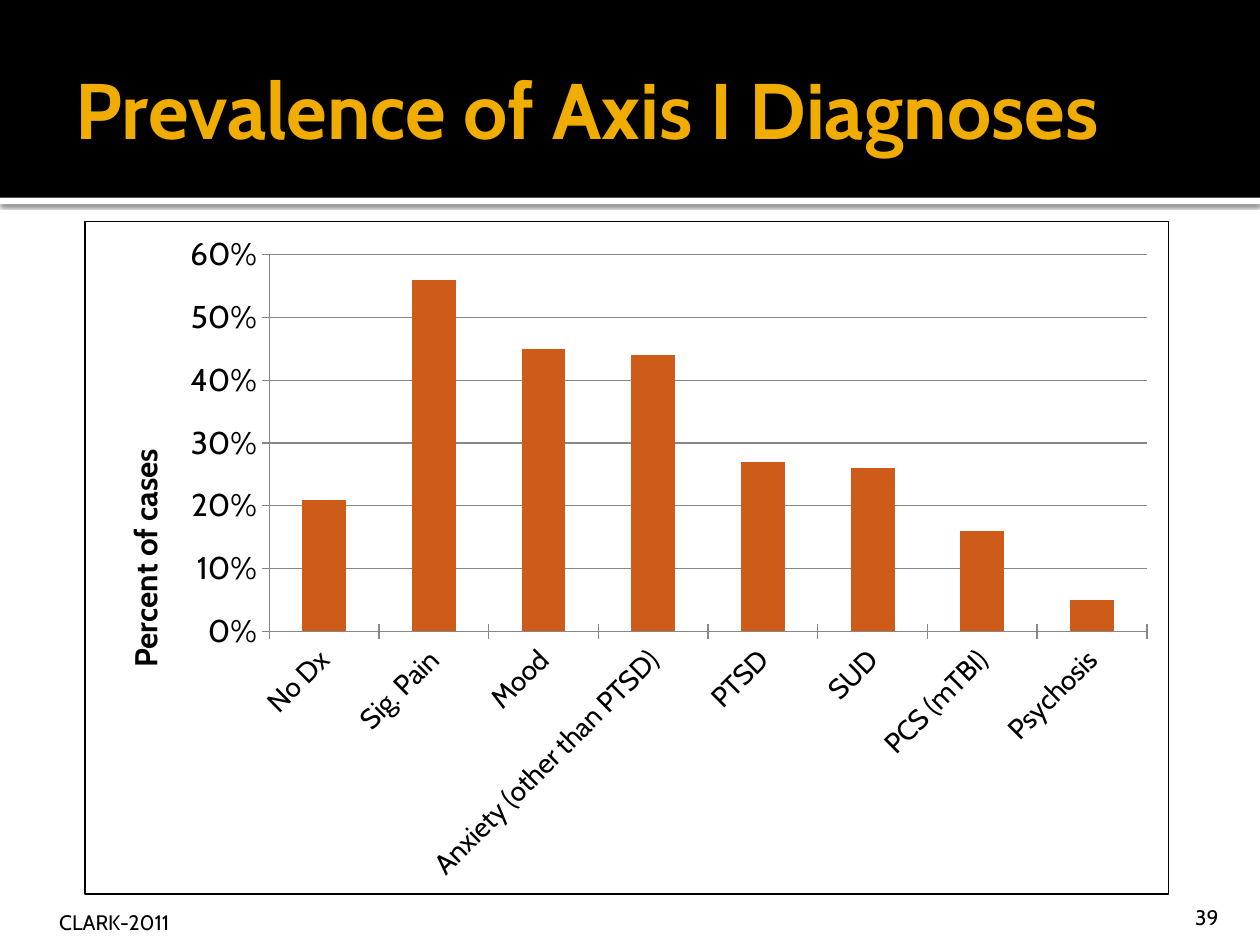
from dataclasses import dataclass

from lxml.etree import SubElement
from pptx import Presentation
from pptx.chart.data import CategoryChartData
from pptx.dml.color import RGBColor
from pptx.enum.chart import XL_CHART_TYPE, XL_TICK_MARK
from pptx.enum.shapes import MSO_SHAPE
from pptx.enum.text import MSO_ANCHOR, PP_ALIGN
from pptx.oxml import parse_xml
from pptx.oxml.ns import nsdecls, qn
from pptx.util import Inches, Pt


@dataclass(frozen=True)
class Theme:
    font: str = "Cabin"
    gold: str = "F0AD00"
    black: str = "000000"
    white: str = "FFFFFF"
    bar: str = "CF5B1B"
    grid: str = "878787"
    head: int = 45
    body: int = 18
    label: int = 16
    small: int = 12


THEME = Theme()

CASES = {
    "No Dx": 0.21,
    "Sig. Pain": 0.56,
    "Mood": 0.45,
    "Anxiety (other than PTSD)": 0.44,
    "PTSD": 0.27,
    "SUD": 0.26,
    "PCS (mTBI)": 0.16,
    "Psychosis": 0.05,
}


def rgb(code):
    return RGBColor.from_string(code)


def style(font, size, color=THEME.black, bold=False):
    font.name = THEME.font
    font.size = Pt(size)
    font.bold = bold
    font.color.rgb = rgb(color)


def write(frame, text, size=THEME.small, color=THEME.black, bold=False,
          align=PP_ALIGN.LEFT, anchor=MSO_ANCHOR.BOTTOM,
          inset=(0.05, 0.05, 0.05, 0)):
    frame.word_wrap = True
    frame.vertical_anchor = anchor
    (frame.margin_left, frame.margin_top,
     frame.margin_right, frame.margin_bottom) = map(Inches, inset)
    para = frame.paragraphs[0]
    para.alignment = align
    run = para.add_run()
    run.text = text
    style(run.font, size, color, bold)


def add_band(slide, top, height, color):
    band = slide.shapes.add_shape(
        MSO_SHAPE.RECTANGLE, 0, Inches(top), Inches(10), Inches(height))
    band.shadow.inherit = False
    band.fill.solid()
    band.fill.fore_color.rgb = rgb(color)
    band.line.fill.background()
    return band


def add_shadow(shape):
    effects = shape._element.spPr.find(qn("a:effectLst"))
    effects.append(parse_xml(
        f'<a:outerShdw {nsdecls("a")} blurRad="{Pt(2.5)}" dist="{Pt(0.8)}" '
        'dir="5400000" algn="t" rotWithShape="0">'
        f'<a:srgbClr val="{THEME.black}"><a:alpha val="60000"/></a:srgbClr>'
        '</a:outerShdw>'))


def add_title(slide, text):
    title = slide.shapes.title
    title.left, title.top = Inches(0.5), Inches(0.17)
    title.width, title.height = Inches(9), Inches(1.37)
    write(title.text_frame, text, size=THEME.head, color=THEME.gold, bold=True,
          anchor=MSO_ANCHOR.MIDDLE, inset=(0.1, 0.05, 0.05, 0.05))
    slide.shapes._spTree.append(title._element)


def add_note(slide, text, box, **form):
    note = slide.shapes.add_textbox(*map(Inches, box))
    write(note.text_frame, text, **form)


def place(node, index, **parts):
    layout = node.find(qn("c:layout"))
    if layout is None:
        layout = parse_xml(f'<c:layout {nsdecls("c")}/>')
        node.insert(index, layout)
    manual = SubElement(layout, qn("c:manualLayout"))
    for tag, value in parts.items():
        SubElement(manual, qn(f"c:{tag}")).set("val", str(value))


def turn(node, degrees):
    body = next(node.iter(qn("a:bodyPr")))
    body.set("rot", str(degrees * 60000))
    body.set("vert", "horz")


def add_border(chart):
    space = chart._chartSpace
    space.find(qn("c:txPr")).addprevious(parse_xml(
        f'<c:spPr {nsdecls("c", "a")}><a:noFill/><a:ln w="{Pt(0.75)}">'
        f'<a:solidFill><a:srgbClr val="{THEME.black}"/></a:solidFill>'
        '</a:ln></c:spPr>'))


def format_axis(axis, size):
    axis.major_tick_mark = XL_TICK_MARK.CROSS
    axis.minor_tick_mark = XL_TICK_MARK.NONE
    style(axis.tick_labels.font, size)
    axis.format.line.color.rgb = rgb(THEME.grid)
    axis.format.line.width = Pt(0.75)


def add_bars(slide, cases, box):
    data = CategoryChartData(number_format="0%")
    data.categories = list(cases)
    data.add_series("Series 1", list(cases.values()))
    chart = slide.shapes.add_chart(
        XL_CHART_TYPE.COLUMN_CLUSTERED, *map(Inches, box), data).chart
    chart.has_title = False
    chart.has_legend = False
    style(chart.font, THEME.body)
    add_border(chart)

    plot = chart.plots[0]
    plot.vary_by_categories = False
    plot.gap_width = 150
    fill = plot.series[0].format.fill
    fill.solid()
    fill.fore_color.rgb = rgb(THEME.bar)
    area = next(chart._chartSpace.iter(qn("c:plotArea")))
    place(area, 0, layoutTarget="inner", xMode="edge", yMode="edge",
          x=0.17, y=0.05, w=0.81, h=0.56)

    names, share = chart.category_axis, chart.value_axis
    format_axis(names, THEME.label)
    turn(names._element.find(qn("c:txPr")), -45)

    format_axis(share, THEME.body)
    share.minimum_scale, share.maximum_scale = 0, 0.6
    share.major_unit = 0.1
    share.tick_labels.number_format = "0%"
    share.tick_labels.number_format_is_linked = False
    share.has_major_gridlines = True
    grid = share.major_gridlines.format.line
    grid.color.rgb = rgb(THEME.grid)
    grid.width = Pt(0.75)

    run = share.axis_title.text_frame.paragraphs[0].add_run()
    run.text = "Percent of cases"
    style(run.font, THEME.body, bold=True)
    head = share.axis_title._element
    turn(head, -90)
    place(head, 1, xMode="edge", yMode="edge", x=0.03, y=0.33)


def main():
    deck = Presentation()
    deck.slide_width, deck.slide_height = Inches(10), Inches(7.5)
    slide = deck.slides.add_slide(deck.slide_layouts[5])
    add_shadow(add_band(slide, 1.57, 0.05, THEME.white))
    add_band(slide, 0, 1.57, THEME.black)
    add_title(slide, "Prevalence of Axis I Diagnoses")
    add_note(slide, "CLARK-2011", (0.42, 7.17, 8.49, 0.25))
    add_note(slide, "39", (8.97, 7.08, 0.8, 0.3), align=PP_ALIGN.RIGHT,
             inset=(0.1, 0.05, 0.1, 0))
    add_bars(slide, CASES, (0.67, 1.75, 8.61, 5.35))
    deck.save("out.pptx")


if __name__ == "__main__":
    main()
